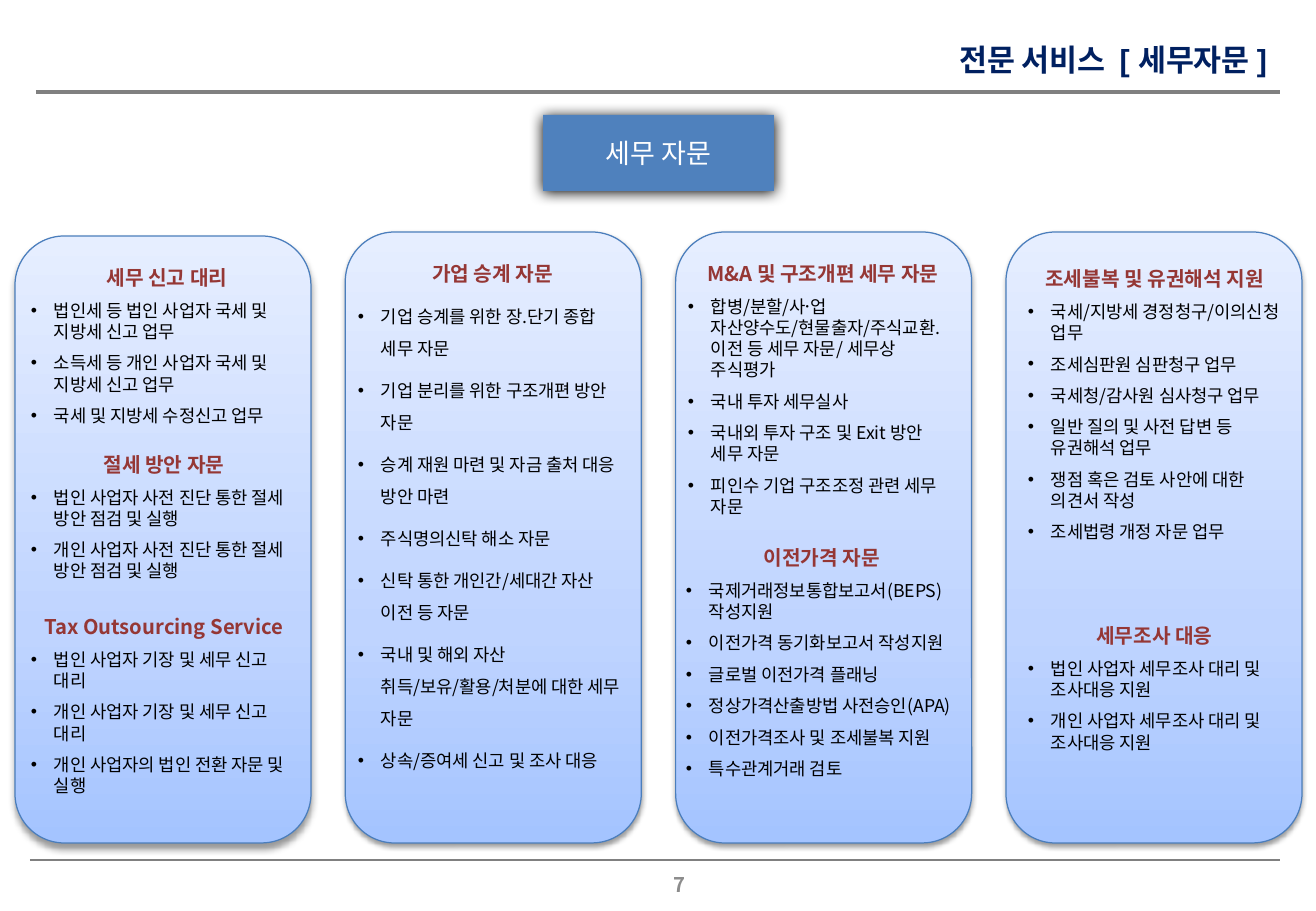
from copy import deepcopy
from lxml.etree import SubElement
from pptx import Presentation
from pptx.dml.color import RGBColor
from pptx.enum.shapes import MSO_CONNECTOR, MSO_SHAPE
from pptx.enum.text import MSO_ANCHOR, PP_ALIGN
from pptx.oxml.ns import qn
from pptx.util import Emu, Pt

# Content; lengths in px
SCALE = 914400 / 121.5
SLIDE = (1316, 911)
FONT = "Noto Sans CJK KR"
TITLE = ("전문 서비스  [ 세무자문 ]", (821, 35, 458, 49))
TOPIC = ("세무 자문", (543, 115, 231, 76))
PAGE_NUMBER = ("7", (471, 860, 417, 49))
RULES = [(36, 92, 1280, 2.25), (30, 860, 1280, 1.5)]  # left, y, right, weight
GRADIENT = [(0, "A4C4FF"), (0.35, "BFD4FF"), (1, "E6EEFF")]
PANEL_LEFT, PANEL_PITCH, PANEL_WIDTH, PANEL_BOTTOM = 15, 330.33, 296, 843
BULLET_INDENT = 23

# Each panel: top, shadow (opacity %, blur pt, distance pt), sections
# Each section: box, heading spacing, item spacing, heading, items
PANELS = [
    (236, (40, 4, 3), [
        ((19, 247, 296, 187), 1.5, 1, "세무 신고 대리", [
            "법인세 등 법인 사업자 국세 및 지방세 신고 업무",
            "소득세 등 개인 사업자 국세 및 지방세 신고 업무",
            "국세 및 지방세 수정신고 업무"]),
        ((19, 446, 290, 143), 1, 1, "절세 방안 자문", [
            "법인 사업자 사전 진단 통한 절세 방안 점검 및 실행",
            "개인 사업자 사전 진단 통한 절세 방안 점검 및 실행"]),
        ((19, 584, 290, 221), 2, 1, "Tax Outsourcing Service", [
            "법인 사업자 기장 및 세무 신고 대리",
            "개인 사업자 기장 및 세무 신고 대리",
            "개인 사업자의 법인 전환 자문 및 실행"]),
    ]),
    (232, (38, 3.1, 1.6), [
        ((346, 243, 293, 503), 1.5, 1.5, "가업 승계 자문", [
            "기업 승계를 위한 장.단기 종합 세무 자문",
            "기업 분리를 위한 구조개편 방안 자문",
            "승계 재원 마련 및 자금 출처 대응 방안 마련",
            "주식명의신탁 해소 자문",
            "신탁 통한 개인간/세대간 자산 이전 등 자문",
            "국내 및 해외 자산 취득/보유/활용/처분에 대한 세무 자문",
            "상속/증여세 신고 및 조사 대응"]),
    ]),
    (232, (38, 3.1, 1.6), [
        ((676, 243, 294, 261), 1.5, 1, "M&A 및 구조개편 세무 자문", [
            "합병/분할/사업〮자산양수도/현물출자/주식교환.이전 등 세무 자문/ 세무상 주식평가",
            "국내 투자 세무실사",
            "국내외 투자 구조 및 Exit 방안 세무 자문",
            "피인수 기업 구조조정 관련 세무 자문"]),
        ((674, 515, 296, 316), 2, 1, "이전가격 자문", [
            "국제거래정보통합보고서(BEPS) 작성지원",
            "이전가격 동기화보고서 작성지원",
            "글로벌 이전가격 플래닝",
            "정상가격산출방법 사전승인(APA)",
            "이전가격조사 및 조세불복 지원",
            "특수관계거래 검토"]),
    ]),
    (232, (38, 3.1, 1.6), [
        ((1016, 236, 277, 338), 2, 1, "조세불복 및 유권해석 지원", [
            "국세/지방세 경정청구/이의신청 업무",
            "조세심판원 심판청구 업무",
            "국세청/감사원 심사청구 업무",
            "일반 질의 및 사전 답변 등 유권해석 업무",
            "쟁점 혹은 검토 사안에 대한 의견서 작성",
            "조세법령 개정 자문 업무"]),
        ((1016, 593, 277, 168), 2, 1, "세무조사 대응", [
            "법인 사업자 세무조사 대리 및 조사대응 지원",
            "개인 사업자 세무조사 대리 및 조사대응 지원"]),
    ]),
]


def px(length):
    return Emu(round(length * SCALE))


def box_emu(box):
    return [px(length) for length in box]


def color(value):
    return RGBColor.from_string(value)


def write(paragraph, text, size, ink, bold=False, align=PP_ALIGN.LEFT, font=FONT):
    paragraph.text = text
    paragraph.alignment = align
    paragraph.font.size = Pt(size)
    paragraph.font.bold = bold
    paragraph.font.name = font
    paragraph.font.color.rgb = color(ink)
    defaults = paragraph._p.pPr.find(qn("a:defRPr"))
    SubElement(defaults, qn("a:ea"), typeface=FONT)


def add_bullet(paragraph):
    properties = paragraph._p.get_or_add_pPr()
    properties.set("marL", str(px(BULLET_INDENT)))
    properties.set("indent", str(-px(BULLET_INDENT)))
    SubElement(properties, qn("a:buFont"), typeface="Arial")
    SubElement(properties, qn("a:buChar"), char="•")


def add_shadow(shape, opacity, blur, distance):
    shape.shadow.inherit = False
    effects = shape._element.spPr.find(qn("a:effectLst"))
    shadow = SubElement(effects, qn("a:outerShdw"), blurRad=str(Pt(blur)),
                        dist=str(Pt(distance)), dir="5400000", rotWithShape="0")
    black = SubElement(shadow, qn("a:srgbClr"), val="000000")
    SubElement(black, qn("a:alpha"), val=str(opacity * 1000))


def add_text_box(slide, box):
    frame = slide.shapes.add_textbox(*box_emu(box)).text_frame
    frame.word_wrap = True
    return frame


def add_panel(slide, left, top, shadow):
    panel = slide.shapes.add_shape(
        MSO_SHAPE.ROUNDED_RECTANGLE,
        *box_emu((left, top, PANEL_WIDTH, PANEL_BOTTOM - top)))
    panel.fill.gradient()
    panel.fill.gradient_angle = 90
    stops = panel._element.spPr.find(".//" + qn("a:gsLst"))
    stops.append(deepcopy(stops[-1]))
    for stop, (position, value) in zip(panel.fill.gradient_stops, GRADIENT):
        stop.position = position
        stop.color.rgb = color(value)
    panel.line.color.rgb = color("4B7EBC")
    panel.line.width = Pt(0.75)
    add_shadow(panel, *shadow)


def add_section(slide, box, heading_spacing, item_spacing, heading, items):
    frame = add_text_box(slide, box)
    first = frame.paragraphs[0]
    first.line_spacing = heading_spacing
    first.space_after = Pt(6)
    write(first, heading, 12, "953735", True, PP_ALIGN.CENTER)
    for item in items:
        paragraph = frame.add_paragraph()
        paragraph.line_spacing = item_spacing
        paragraph.space_after = Pt(6)
        add_bullet(paragraph)
        write(paragraph, item, 10.5, "000000")


def main():
    deck = Presentation()
    deck.slide_width, deck.slide_height = box_emu(SLIDE)
    slide = deck.slides.add_slide(deck.slide_layouts[5])

    # Title
    text, box = TITLE
    title = slide.shapes.title
    title.left, title.top, title.width, title.height = box_emu(box)
    title.text_frame.vertical_anchor = MSO_ANCHOR.TOP
    write(title.text_frame.paragraphs[0], text, 18, "002060", True,
          PP_ALIGN.RIGHT, "Arial")

    # Header and footer rules
    for left, y, right, weight in RULES:
        rule = slide.shapes.add_connector(
            MSO_CONNECTOR.STRAIGHT, *box_emu((left, y, right, y)))
        rule.line.color.rgb = color("808080")
        rule.line.width = Pt(weight)
        SubElement(rule._element.spPr, qn("a:effectLst"))

    # Panels with their sections
    for column, (top, shadow, sections) in enumerate(PANELS):
        add_panel(slide, PANEL_LEFT + column * PANEL_PITCH, top, shadow)
        for section in sections:
            add_section(slide, *section)

    # Topic box
    text, box = TOPIC
    topic = slide.shapes.add_shape(MSO_SHAPE.RECTANGLE, *box_emu(box))
    topic.fill.solid()
    topic.fill.fore_color.rgb = color("4F81BD")
    topic.line.fill.background()
    add_shadow(topic, 100, 8.5, 1)
    topic.text_frame.vertical_anchor = MSO_ANCHOR.MIDDLE
    write(topic.text_frame.paragraphs[0], text, 16, "FFFFFF", align=PP_ALIGN.CENTER)

    # Page number
    text, box = PAGE_NUMBER
    page_number = add_text_box(slide, box)
    page_number.vertical_anchor = MSO_ANCHOR.MIDDLE
    write(page_number.paragraphs[0], text, 12, "8C8C8C", True, PP_ALIGN.CENTER)

    deck.save("out.pptx")


if __name__ == "__main__":
    main()
